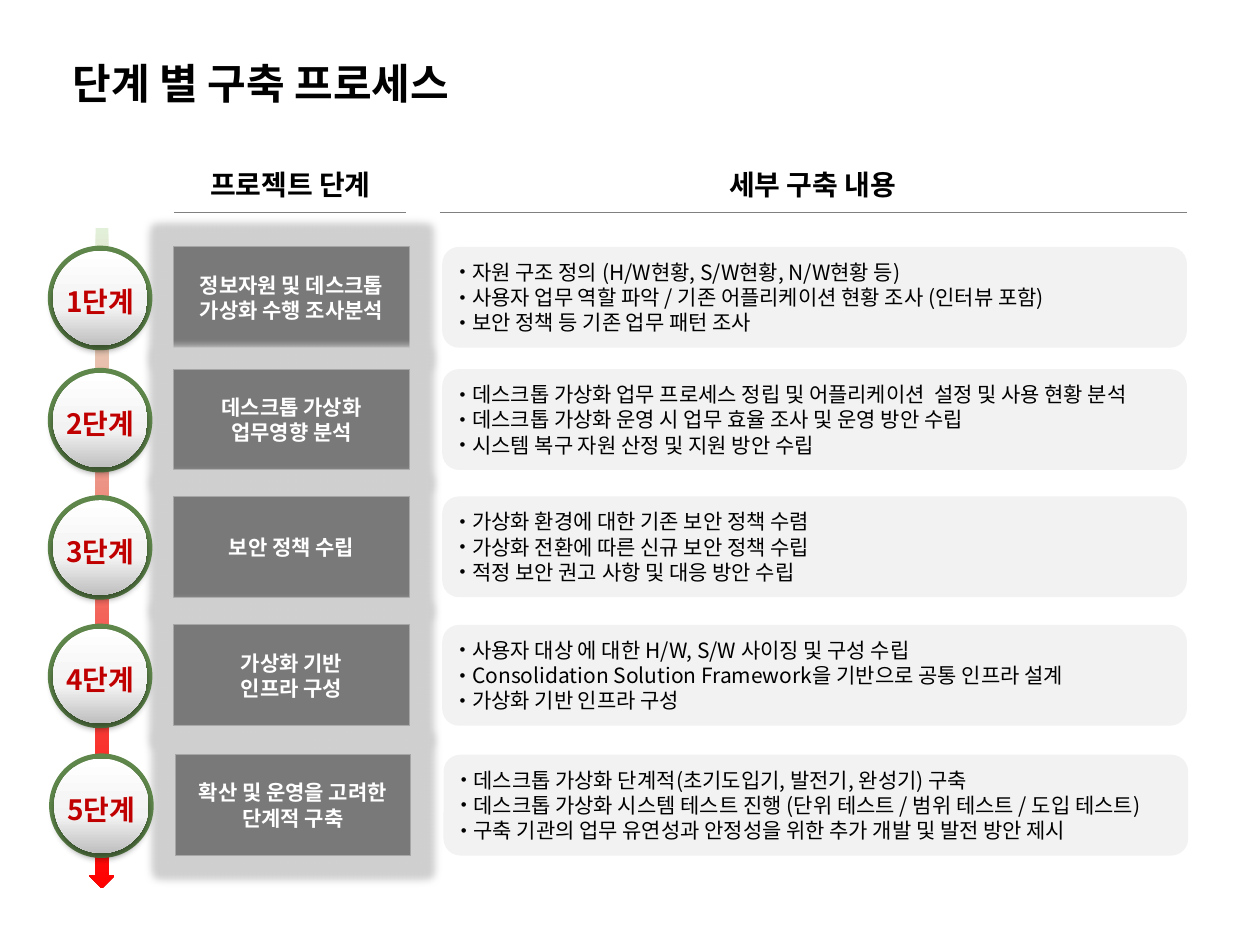
import pptx
import pptx.util
import pptx.dml.color
import pptx.enum.shapes
import pptx.enum.text
import pptx.oxml
import pptx.oxml.ns
import lxml.etree

Inches = pptx.util.Inches
Pt = pptx.util.Pt
RGBColor = pptx.dml.color.RGBColor
SHAPE = pptx.enum.shapes.MSO_SHAPE
CENTER = pptx.enum.text.PP_ALIGN.CENTER
LEFT = pptx.enum.text.PP_ALIGN.LEFT
MIDDLE = pptx.enum.text.MSO_ANCHOR.MIDDLE
qn = pptx.oxml.ns.qn

FONT = "Noto Sans CJK KR"
BLACK = RGBColor(0x00, 0x00, 0x00)
WHITE = RGBColor(0xFF, 0xFF, 0xFF)
RED = RGBColor(0xC0, 0x00, 0x00)
GREEN = RGBColor(0x5F, 0x87, 0x4B)
DARK_GRAY = RGBColor(0x40, 0x40, 0x40)
RULE_GRAY = RGBColor(0x80, 0x80, 0x80)
BORDER_GRAY = RGBColor(0xA6, 0xA6, 0xA6)
PANEL_GRAY = RGBColor(0xF2, 0xF2, 0xF2)
HALO_GRAY = RGBColor(0xD0, 0xD0, 0xD0)
BALL_STOPS = [(0, WHITE), (61, PANEL_GRAY), (100, RGBColor(0xBF, 0xBF, 0xBF))]
ARROW_STOPS = [(0, RGBColor(0xE2, 0xF0, 0xD9)), (100, RGBColor(0xFF, 0x00, 0x00))]

STEPS = [  # top, sideways shift, stage lines, details
    (1.96, 0, ["정보자원 및 데스크톱 가상화 수행 조사분석"],
     ["자원 구조 정의 (H/W현황, S/W현황, N/W현황 등)",
      "사용자 업무 역할 파악 / 기존 어플리케이션 현황 조사 (인터뷰 포함)",
      "보안 정책 등 기존 업무 패턴 조사"]),
    (2.93, 0, ["데스크톱 가상화", "업무영향 분석"],
     ["데스크톱 가상화 업무 프로세스 정립 및 어플리케이션  설정 및 사용 현황 분석",
      "데스크톱 가상화 운영 시 업무 효율 조사 및 운영 방안 수립",
      "시스템 복구 자원 산정 및 지원 방안 수립"]),
    (3.94, 0, ["보안 정책 수립"],
     ["가상화 환경에 대한 기존 보안 정책 수렴",
      "가상화 전환에 따른 신규 보안 정책 수립",
      "적정 보안 권고 사항 및 대응 방안 수립"]),
    (4.96, 0, ["가상화 기반", "인프라 구성"],
     ["사용자 대상 에 대한 H/W, S/W 사이징 및 구성 수립",
      "Consolidation Solution Framework을 기반으로 공통 인프라 설계",
      "가상화 기반 인프라 구성"]),
    (5.99, 0.01, ["확산 및 운영을 고려한", "단계적 구축"],
     ["데스크톱 가상화 단계적(초기도입기, 발전기, 완성기) 구축",
      "데스크톱 가상화 시스템 테스트 진행 (단위 테스트 / 범위 테스트 / 도입 테스트)",
      "구축 기관의 업무 유연성과 안정성을 위한 추가 개발 및 발전 방안 제시"]),
]


def add_block(shapes, preset, box, fill=None):
    """Add a borderless shape, or a text box if preset is None; a list as fill is a vertical gradient."""
    place = [Inches(length) for length in box]
    if preset is None:
        block = shapes.add_textbox(*place)
    else:
        block = shapes.add_shape(preset, *place)
        block.shadow.inherit = False
        block.line.fill.background()
        if isinstance(fill, list):
            block.fill.gradient()
            block.fill.gradient_angle = 270
            stops = block._element.spPr.find(qn("a:gradFill")).find(qn("a:gsLst"))
            for stop in list(stops):
                stops.remove(stop)
            for position, color in fill:
                stop = lxml.etree.SubElement(stops, qn("a:gs"), pos=str(position * 1000))
                lxml.etree.SubElement(stop, qn("a:srgbClr"), val=str(color))
        else:
            block.fill.solid()
            block.fill.fore_color.rgb = fill
    block.text_frame.word_wrap = True
    return block


def write(block, lines, size, color, bold=True, align=CENTER, bullet=False):
    frame = block.text_frame
    for index, line in enumerate(lines):
        paragraph = frame.paragraphs[0] if index == 0 else frame.add_paragraph()
        paragraph.alignment = align
        if bullet:
            props = paragraph._p.get_or_add_pPr()
            props.set("marL", str(Inches(0.1)))
            props.set("indent", str(-Inches(0.1)))
            lxml.etree.SubElement(props, qn("a:buSzPct"), val="80000")
            lxml.etree.SubElement(props, qn("a:buFont"), typeface="Arial")
            lxml.etree.SubElement(props, qn("a:buChar"), char="•")
        run = paragraph.add_run()
        run.text = line
        run.font.size = Pt(size)
        run.font.bold = bold
        run.font.color.rgb = color
        run.font.name = FONT
        lxml.etree.SubElement(run._r.get_or_add_rPr(), qn("a:ea"), typeface=FONT)


deck = pptx.Presentation()
deck.slide_width = Inches(10)
deck.slide_height = Inches(7.5)
slide = deck.slides.add_slide(deck.slide_layouts[6])
shapes = slide.shapes

add_block(shapes, SHAPE.DOWN_ARROW, (0.71, 1.81, 0.2, 5.24), ARROW_STOPS)
title = add_block(shapes, None, (0.48, 0.41, 8.33, 0.5))
write(title, ["단계 별 구축 프로세스"], 24, BLACK, align=LEFT)

# Column headings and their rules
for heading, left, width, rule_start, rule_end in [
    ("프로젝트 단계", 1.36, 1.89, 1.38, 3.22),
    ("세부 구축 내용", 5.12, 2.66, 3.49, 9.42),
]:
    write(add_block(shapes, None, (left, 1.28, width, 0.37)), [heading], 16, BLACK)
    rule = shapes.add_connector(pptx.enum.shapes.MSO_CONNECTOR.STRAIGHT,
                                Inches(rule_start), Inches(1.69), Inches(rule_end), Inches(1.69))
    rule.line.color.rgb = RULE_GRAY
    rule.line.width = Pt(0.5)
    lxml.etree.SubElement(rule._element.spPr, qn("a:effectLst"))

for number, (top, shift, stage_lines, details) in enumerate(STEPS, start=1):
    stage = add_block(shapes, SHAPE.RECTANGLE, (1.38 + shift, top, 1.87, 0.8), DARK_GRAY)
    fill_color = stage._element.spPr.find(qn("a:solidFill"))[0]
    lxml.etree.SubElement(fill_color, qn("a:alpha"), val="60000")
    stage.line.color.rgb = BORDER_GRAY
    stage.line.width = Pt(0.5)
    glow = lxml.etree.SubElement(stage._element.spPr.find(qn("a:effectLst")), qn("a:glow"),
                                 rad=str(Pt(9)))
    lxml.etree.SubElement(glow, qn("a:srgbClr"), val=str(HALO_GRAY))
    frame = stage.text_frame
    frame.margin_left = frame.margin_right = frame.margin_top = frame.margin_bottom = 0
    frame.vertical_anchor = MIDDLE
    write(stage, stage_lines, 12, WHITE)

    panel = add_block(shapes, SHAPE.FLOWCHART_ALTERNATE_PROCESS,
                      (3.51 + shift, top, 5.91, 0.8), PANEL_GRAY)
    panel.text_frame.vertical_anchor = MIDDLE
    write(panel, details, 12, BLACK, bold=False, align=LEFT, bullet=True)

    badge = shapes.add_group_shape().shapes
    add_block(badge, SHAPE.OVAL, (0.38 + shift, top - 0.01, 0.83, 0.83), GREEN)
    ball = add_block(badge, SHAPE.OVAL, (0.42 + shift, top + 0.03, 0.75, 0.75), BALL_STOPS)
    shadow = lxml.etree.SubElement(ball._element.spPr.find(qn("a:effectLst")), qn("a:outerShdw"),
                                   blurRad=str(Pt(4)), dist=str(Pt(3)), dir="5400000",
                                   rotWithShape="0")
    shadow_color = lxml.etree.SubElement(shadow, qn("a:srgbClr"), val=str(BLACK))
    lxml.etree.SubElement(shadow_color, qn("a:alpha"), val="40000")
    label = add_block(badge, None, (0.37 + shift, top + 0.23, 0.85, 0.35))
    label.text_frame.margin_left = label.text_frame.margin_right = 0
    label.text_frame.vertical_anchor = MIDDLE
    write(label, [f"{number}단계"], 16, RED)
    label.text_frame.paragraphs[0].line_spacing = 1.2

deck.save("out.pptx")
